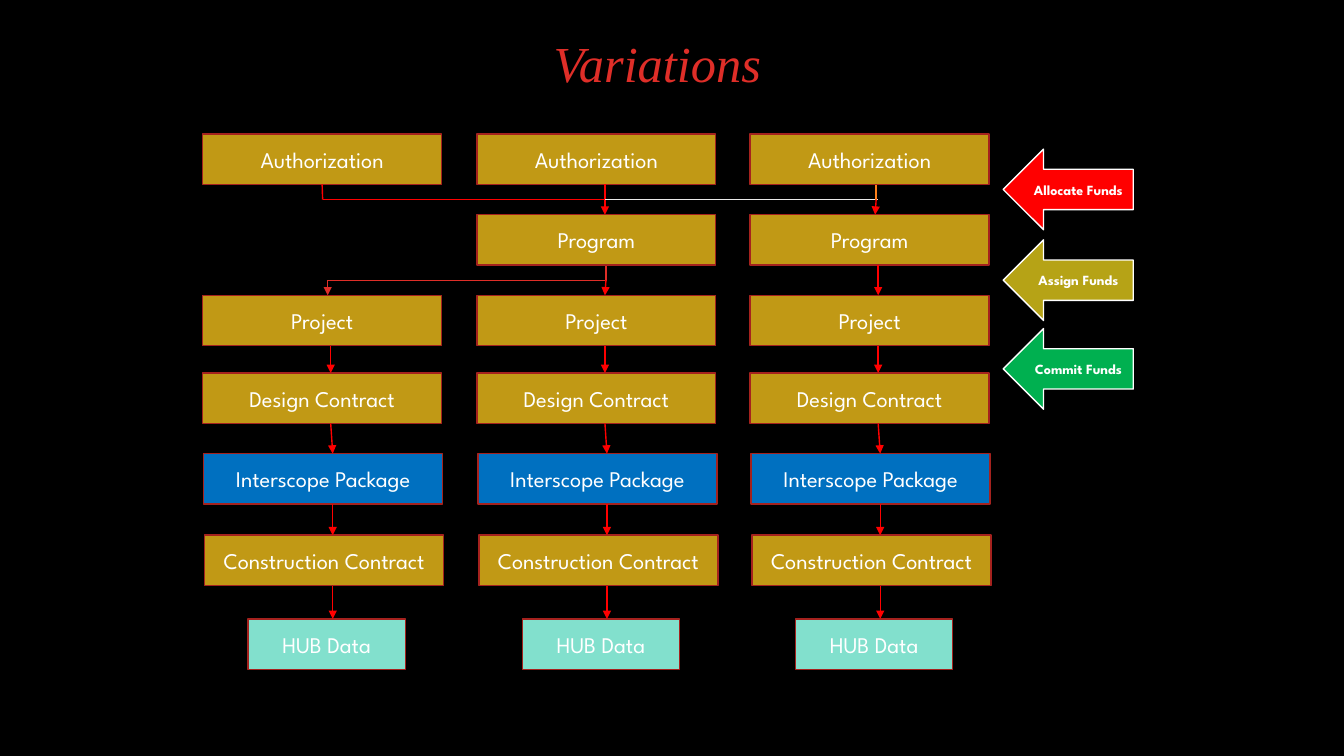
import lxml.etree
import pptx
import pptx.dml.color
import pptx.enum.shapes
import pptx.enum.text
import pptx.oxml.ns
import pptx.util

COLUMNS = (2.01, 4.73, 7.44)
BOX_WIDTH, HUB_WIDTH, BOX_HEIGHT = 2.37, 1.56, 0.5
GOLD, BLUE, MINT = "C19915", "0070C0", "82E0CD"
RED, CRIMSON, WHITE = "FF0000", "DF2E28", "FFFFFF"
AUTHORIZATION_BUS, PROGRAM_BUS = 1.98, 2.78

# label, top, indent in column, width, fill, arrow position in column
STAGES = (
    ("Authorization", 1.33, 0, BOX_WIDTH, GOLD, 1.27),
    ("Program", 2.13, 0, BOX_WIDTH, GOLD, 1.27),
    ("Project", 2.93, 0, BOX_WIDTH, GOLD, 1.27),
    ("Design Contract", 3.7, 0, BOX_WIDTH, GOLD, 1.27),
    ("Interscope Package", 4.5, 0.01, BOX_WIDTH, BLUE, 1.29),
    ("Construction Contract", 5.31, 0.02, BOX_WIDTH, GOLD, 1.29),
    ("HUB Data", 6.14, 0.45, HUB_WIDTH, MINT, 1.29),
)
MISSING_STAGES = {(0, "Program")}
BRANCHED_DROPS = {(1, "Project"), (2, "Program")}

# start, end, colour, arrowhead
BRANCHES = (
    ((3.2, AUTHORIZATION_BUS), (6, AUTHORIZATION_BUS), RED, False),
    ((6, AUTHORIZATION_BUS), (8.71, AUTHORIZATION_BUS), "E9E9E9", False),
    ((8.69, AUTHORIZATION_BUS), (8.69, 1.84), "FE801A", False),
    ((8.69, AUTHORIZATION_BUS), (8.68, 2.13), RED, True),
    ((6.02, PROGRAM_BUS), (3.24, PROGRAM_BUS), CRIMSON, False),
    ((3.25, PROGRAM_BUS), (3.25, 2.93), CRIMSON, True),
    ((6.01, PROGRAM_BUS), (6.01, 2.64), CRIMSON, False),
    ((6.01, PROGRAM_BUS), (6, 2.93), RED, True),
)
FUND_ACTIONS = (
    ("Allocate Funds", 1.48, RED),
    ("Assign Funds", 2.38, "B6A316"),
    ("Commit Funds", 3.26, "00B050"),
)


def colour(target, value):
    """Give a fill or a line a solid hex colour."""
    fill = target if hasattr(target, "solid") else target.fill
    fill.solid()
    fill.fore_color.rgb = pptx.dml.color.RGBColor.from_string(value)


def write(shape, words, size, ink, **styles):
    """Put one centred line of formatted text in a shape."""
    frame = shape.text_frame
    frame.text = words
    frame.vertical_anchor = pptx.enum.text.MSO_ANCHOR.MIDDLE
    line = frame.paragraphs[0]
    line.alignment = pptx.enum.text.PP_ALIGN.CENTER
    font = line.runs[0].font
    for name, value in {"size": pptx.util.Pt(size), **styles}.items():
        setattr(font, name, value)
    colour(font, ink)
    return frame


def add_block(slide, preset, area, fill, outline):
    """Add a filled and outlined preset shape."""
    block = slide.shapes.add_shape(preset, *map(pptx.util.Inches, area))
    block.shadow.inherit = False
    colour(block.fill, fill)
    colour(block.line, outline)
    block.line.width = pptx.util.Pt(1)
    return block


def add_line(slide, start, end, ink, arrow=False):
    """Add a straight line, with an arrowhead at its end if wanted."""
    link = slide.shapes.add_connector(
        pptx.enum.shapes.MSO_CONNECTOR.STRAIGHT, *map(pptx.util.Inches, start + end))
    colour(link.line, ink)
    link.line.width = pptx.util.Pt(1)
    if arrow:
        lxml.etree.SubElement(
            link.line._get_or_add_ln(), pptx.oxml.ns.qn("a:tailEnd"), type="triangle")
    lxml.etree.SubElement(link._element.spPr, pptx.oxml.ns.qn("a:effectLst"))
    return link


def add_title(slide, words):
    """Place the slide's title."""
    title = slide.shapes.title
    area = {"left": 0.77, "top": 0.08, "width": 11.5, "height": 1.16}
    for name, value in area.items():
        setattr(title, name, pptx.util.Inches(value))
    frame = write(title, words, 36, CRIMSON, name="Times New Roman", italic=True)
    frame.paragraphs[0].line_spacing = 0.9


def add_chain(slide, column):
    """Add one column of stages with arrows between neighbours, and return its first box."""
    left = COLUMNS[column]
    boxes = []
    previous = None
    for label, top, indent, width, fill, offset in STAGES:
        if (column, label) in MISSING_STAGES:
            previous = None
            continue
        box = add_block(slide, pptx.enum.shapes.MSO_SHAPE.RECTANGLE,
                        (left + indent, top, width, BOX_HEIGHT), fill, "A5221E")
        write(box, label, 16, WHITE, name="League Spartan")
        boxes.append(box)
        if previous and (column, label) not in BRANCHED_DROPS:
            add_line(slide, previous, (left + offset, top), RED, True)
        previous = (left + offset, top + BOX_HEIGHT)
    return boxes[0]


def add_fund_action(slide, label, top, fill):
    """Add a labelled arrow pointing at the chains."""
    arrow = add_block(slide, pptx.enum.shapes.MSO_SHAPE.LEFT_ARROW,
                      (9.95, top, 1.29, 0.8), fill, WHITE)
    frame = write(arrow, label, 10, WHITE, name="League Spartan", bold=True)
    frame.word_wrap = False


def main():
    """Build the slide and save it."""
    deck = pptx.Presentation()
    deck.slide_width = pptx.util.Inches(13.33)
    deck.slide_height = pptx.util.Inches(7.5)
    slide = deck.slides.add_slide(deck.slide_layouts[5])
    colour(slide.background.fill, "000000")
    add_title(slide, "Variations")
    first_boxes = [add_chain(slide, column) for column in range(len(COLUMNS))]
    stub = add_line(slide, (3.2, 1.83), (3.2, AUTHORIZATION_BUS), RED)
    stub.begin_connect(first_boxes[0], 2)
    for branch in BRANCHES:
        add_line(slide, *branch)
    for action in FUND_ACTIONS:
        add_fund_action(slide, *action)
    deck.save("out.pptx")


if __name__ == "__main__":
    main()
